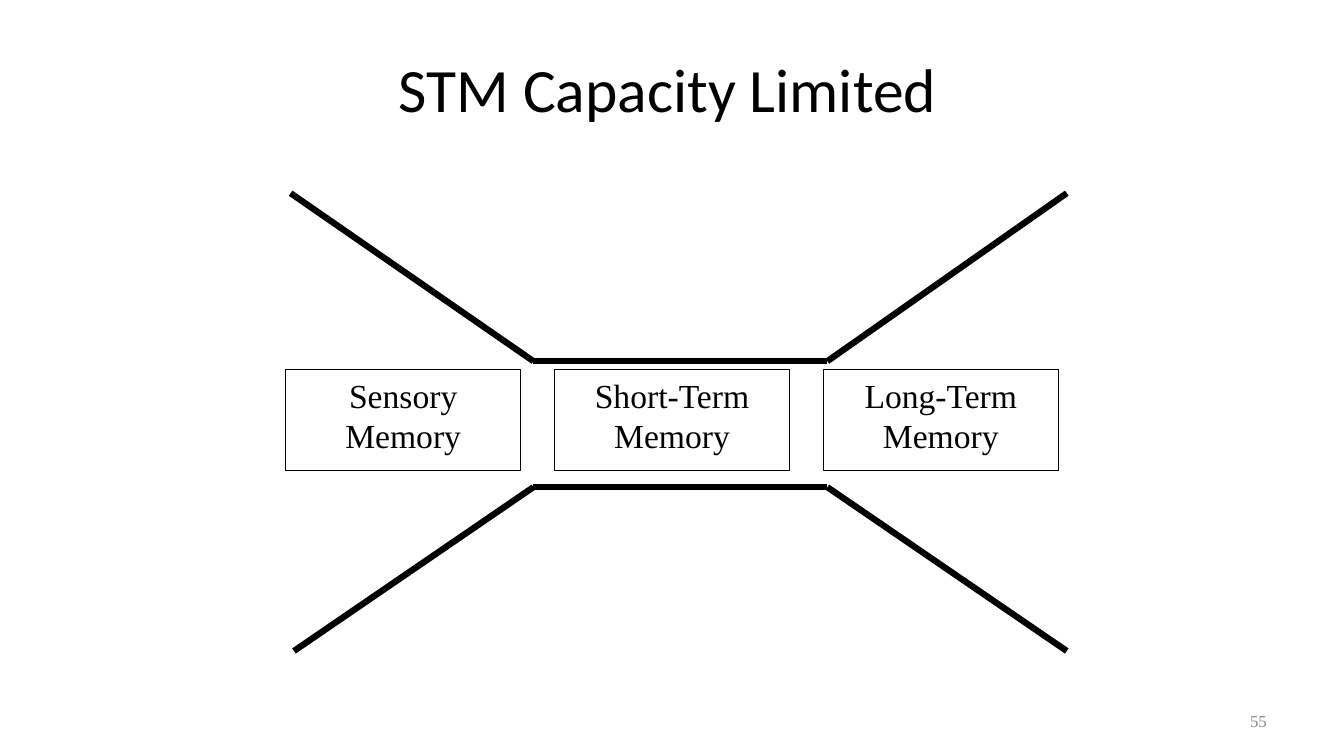
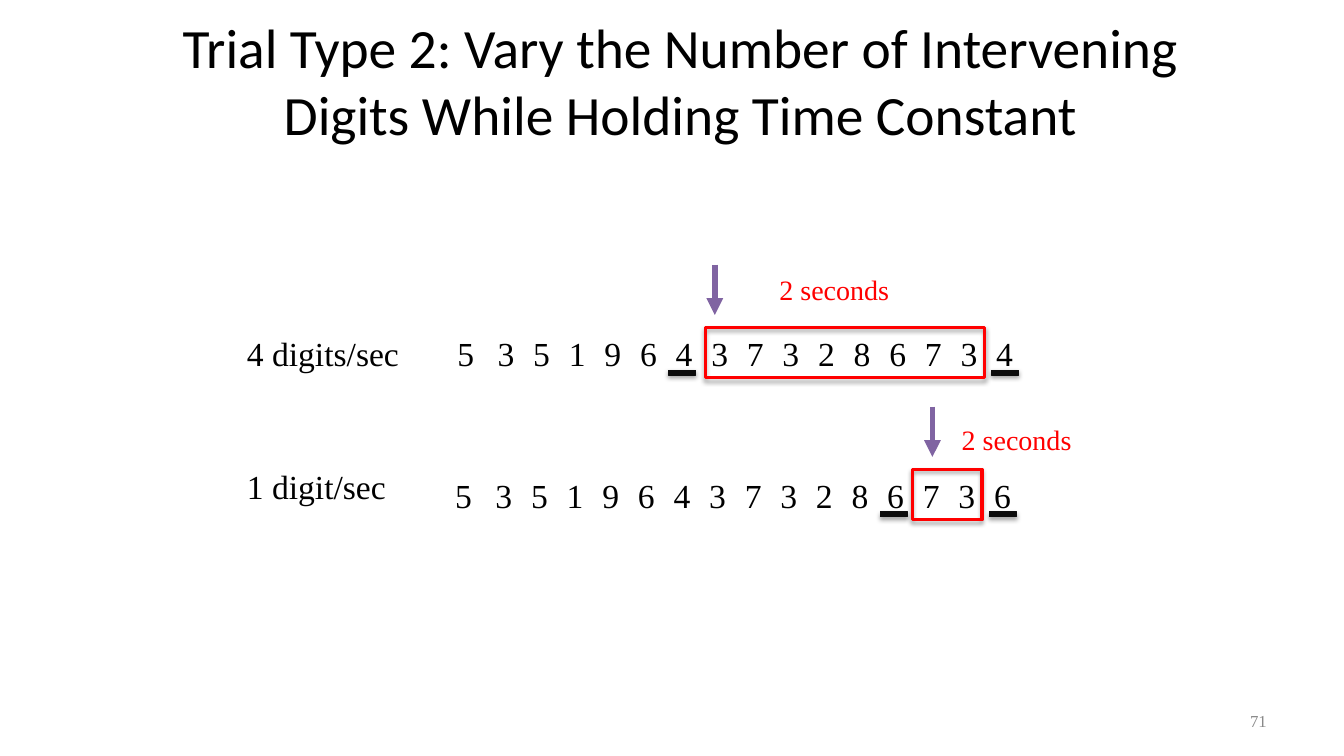
from lxml import etree
from pptx import Presentation, util as u
from pptx.dml.color import RGBColor
from pptx.enum import shapes, text
from pptx.oxml import parse_xml
from pptx.oxml.ns import nsdecls, qn

COLORS = {"ink": "000000", "paper": "FFFFFF", "muted": "898989",
          "mark": "0D0D0D", "cue": "FF0000", "arrow": "8064A2"}
COLS, ROWS = 160, 90
LEFT, CENTER, RIGHT = text.PP_ALIGN.LEFT, text.PP_ALIGN.CENTER, text.PP_ALIGN.RIGHT


class Deck:
    """Holds the shared style and the current slide, on a grid of 160 columns by 90 rows."""

    def __init__(self):
        self.prs = Presentation()
        self.prs.slide_width, self.prs.slide_height = u.Inches(13.33), u.Inches(7.5)
        self.slide = None

    def x(self, col):
        return round(self.prs.slide_width * col / COLS)

    def y(self, row):
        return round(self.prs.slide_height * row / ROWS)

    def area(self, col, row, cols, rows):
        return self.x(col), self.y(row), self.x(cols), self.y(rows)

    def style(self, paragraph, size, color="ink", align=LEFT, font="Times New Roman"):
        paragraph.alignment = align
        paragraph.font.name, paragraph.font.size = font, u.Pt(size)
        paragraph.font.color.rgb = RGBColor.from_string(COLORS[color])

    def new_slide(self, heading, area, size, number):
        self.slide = self.prs.slides.add_slide(self.prs.slide_layouts[5])
        title = self.slide.shapes.title
        title.left, title.top, title.width, title.height = self.area(*area)
        frame = title.text_frame
        frame.text = heading
        frame.auto_size = text.MSO_AUTO_SIZE.NONE
        frame.vertical_anchor = text.MSO_ANCHOR.MIDDLE
        self.style(frame.paragraphs[0], size, align=CENTER, font="Calibri")
        self.label(number, (114.7, 83.4, 37.3, 4.8), 12, "muted", RIGHT,
                   text.MSO_ANCHOR.MIDDLE)

    def label(self, words, area, size=24, color="ink", align=LEFT, anchor=text.MSO_ANCHOR.TOP):
        frame = self.slide.shapes.add_textbox(*self.area(*area)).text_frame
        frame.word_wrap = True
        frame.vertical_anchor = anchor
        frame.text = words
        self.style(frame.paragraphs[0], size, color, align)

    def box(self, area, fill, outline, weight, words="", shadow=False):
        box = self.slide.shapes.add_shape(shapes.MSO_SHAPE.RECTANGLE, *self.area(*area))
        box.shadow.inherit = False
        if fill:
            box.fill.solid()
            box.fill.fore_color.rgb = RGBColor.from_string(COLORS[fill])
        else:
            box.fill.background()
        box.line.color.rgb = RGBColor.from_string(COLORS[outline])
        box.line.width = u.Pt(weight)
        if shadow:
            box._element.spPr.find(qn("a:effectLst")).append(parse_xml(
                f'<a:outerShdw {nsdecls("a")} blurRad="{u.Pt(3.1)}" dist="{u.Pt(1.8)}" '
                f'dir="5400000" rotWithShape="0"><a:srgbClr val="{COLORS["ink"]}">'
                '<a:alpha val="35000"/></a:srgbClr></a:outerShdw>'))
        if words:
            box.text_frame.text = words
            box.text_frame.word_wrap = True
            box.text_frame.vertical_anchor = text.MSO_ANCHOR.TOP
            self.style(box.text_frame.paragraphs[0], 24, align=CENTER)

    def line(self, start, end, color="ink", weight=4.5, arrow=False):
        line = self.slide.shapes.add_connector(
            shapes.MSO_CONNECTOR.STRAIGHT, self.x(start[0]), self.y(start[1]),
            self.x(end[0]), self.y(end[1]))
        line.line.color.rgb = RGBColor.from_string(COLORS[color])
        line.line.width = u.Pt(weight)
        if arrow:
            etree.SubElement(line.line._get_or_add_ln(), qn("a:tailEnd"), type="triangle")
        etree.SubElement(line._element.spPr, qn("a:effectLst"))

    def digit_row(self, digits, left, top, target, frame_left, arrow_at):
        pitch = 4.24
        starts = [left + pitch * (i - 1) for i in range(len(digits))]
        probe = starts[-1]
        starts[0] -= 0.55
        for digit, start in zip(digits, starts):
            self.label(digit, (start, top, 9, 6))
        for mark in (starts[target] + 0.35, probe + 0.6):
            self.box((mark, top + 5.05, 3.25, 0.6), "mark", "mark", 0.75, shadow=True)
        self.box((frame_left, top, probe - 0.25 - frame_left, 6), None, "cue", 2.25, shadow=True)
        self.line((arrow_at, top - 7.5), (arrow_at, top - 1.5), "arrow", 4, arrow=True)


def capacity_slide(deck):
    deck.new_slide("STM Capacity Limited", (28, 3, 103, 15), 44, "55")
    neck_left, neck_right = 63.5, 98.5
    for neck, mouth, mouth_left in ((43, 23, 34.6), (58, 77.5, 35)):
        deck.line((mouth_left, mouth), (neck_left, neck))
        deck.line((neck_left, neck), (neck_right, neck))
        deck.line((127, mouth), (neck_right, neck))
    for i, store in enumerate(("Sensory", "Short-Term", "Long-Term")):
        deck.box((34 + 32 * i, 44, 28, 12), "paper", "ink", 0.75, f"{store} Memory")


def trial_slide(deck):
    deck.new_slide("Trial Type 2: Vary the Number of Intervening Digits "
                   "While Holding Time Constant", (19, 4, 124, 11), 39.6, "71")
    deck.digit_row("5351964373286734", 58.05, 39, 6, 84, 85.1)
    deck.digit_row("5351964373286736", 57.8, 55.9, 12, 108.6, 111)
    deck.label("4 digits/sec", (28.2, 39, 22, 6))
    deck.label("1 digit/sec", (28.2, 54.9, 22, 6))
    for col, row in ((91.6, 31.9), (113.3, 49.7)):
        deck.label("2 seconds", (col, row, 18, 5.3), 20, "cue")


def main():
    deck = Deck()
    capacity_slide(deck)
    trial_slide(deck)
    deck.prs.save("out.pptx")


if __name__ == "__main__":
    main()
